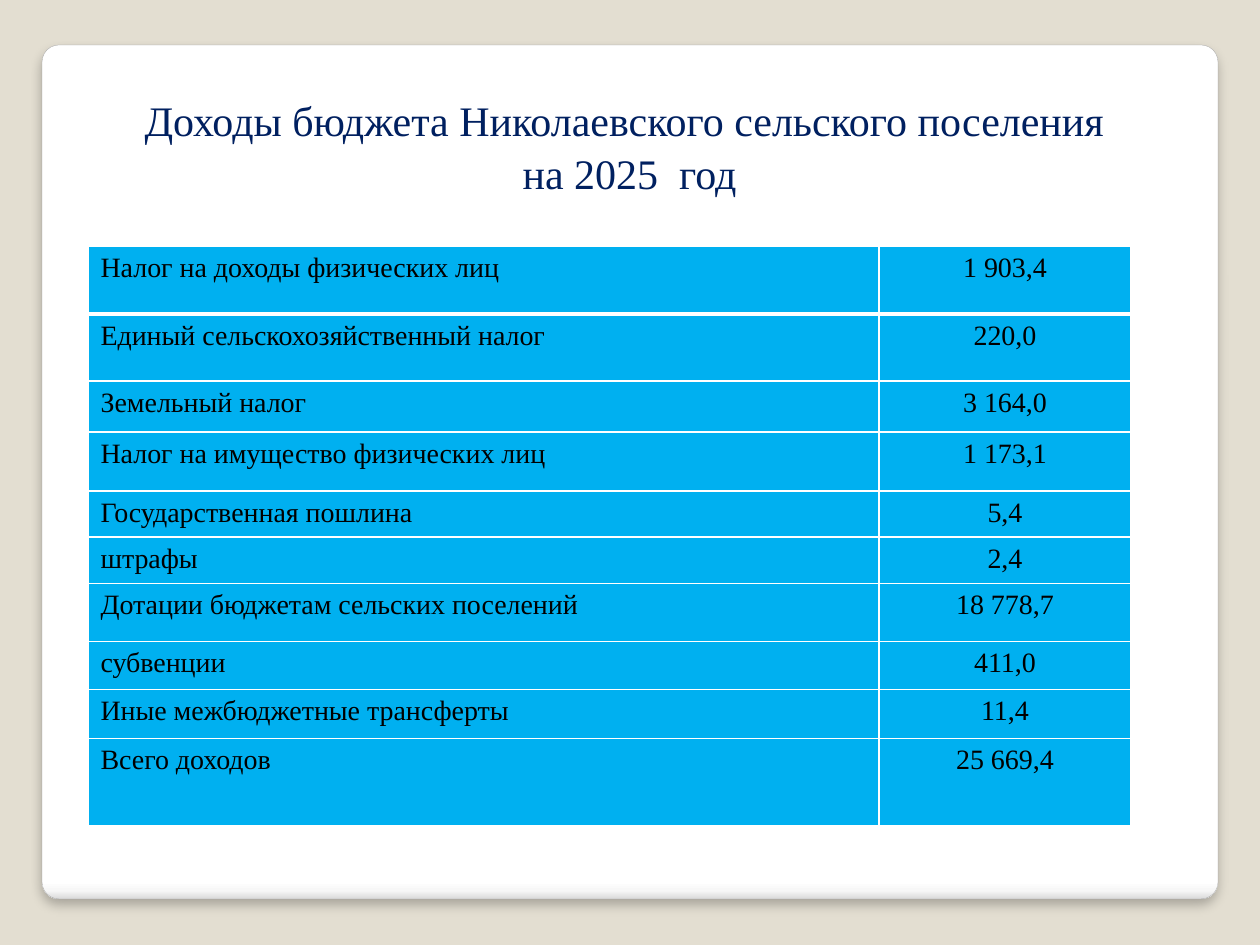
from typing import NamedTuple

from lxml import etree
from pptx import Presentation
from pptx.dml.color import RGBColor
from pptx.enum.shapes import MSO_SHAPE
from pptx.enum.text import PP_ALIGN
from pptx.oxml import parse_xml
from pptx.oxml.ns import nsdecls, qn
from pptx.util import Emu, Pt

ROUND = MSO_SHAPE.ROUNDED_RECTANGLE
LEFT, MID = PP_ALIGN.LEFT, PP_ALIGN.CENTER
SAND = RGBColor(0xE3, 0xDE, 0xD1)
WHITE = RGBColor(0xFF, 0xFF, 0xFF)
PALE = RGBColor(0xF7, 0xF7, 0xF7)
SILVER = RGBColor(0xDA, 0xDA, 0xDA)
GRAY = RGBColor(0xA4, 0xA4, 0xA4)
NAVY = RGBColor(0x00, 0x20, 0x60)
BLACK = RGBColor(0x00, 0x00, 0x00)
BLUE = RGBColor(0x00, 0xB0, 0xF0)
FONT = "Times New Roman"
SCALE = 914400 / 126


class Box(NamedTuple):
    left: int
    top: int
    width: int
    height: int


class Income(NamedTuple):
    label: str
    amount: str
    height: int


CARD = Box(42, 45, 1176, 854)
TITLE = Box(98, 88, 1063, 827)
GRID = Box(88, 246, 1043, 580)
COLS = (791, 252)
STOPS = ((0, WHITE), (98, WHITE), (99, PALE), (100, SILVER))
HEADING = (
    "Доходы бюджета Николаевского сельского поселения ",
    "на 2025  год",
)
ROWS = (
    Income("Налог на доходы физических лиц", "1 903,4", 68),
    Income("Единый сельскохозяйственный налог", "220,0", 67),
    Income("Земельный налог", "3 164,0", 51),
    Income("Налог на имущество физических лиц", "1 173,1", 59),
    Income("Государственная пошлина", "5,4", 46),
    Income("штрафы", "2,4", 46),
    Income("Дотации бюджетам сельских поселений", "18 778,7", 58),
    Income("субвенции", "411,0", 48),
    Income("Иные межбюджетные трансферты", "11,4", 49),
    Income("Всего доходов", "25 669,4", 88),
)


def px(value: int) -> Emu:
    return Emu(round(value * SCALE))


def place(box: Box) -> tuple:
    return tuple(px(side) for side in box)


def style(para, size: int, color: RGBColor, align) -> None:
    para.alignment = align
    for run in para.runs:
        run.font.name = FONT
        run.font.size = Pt(size)
        run.font.color.rgb = color


def draw_card(slide) -> None:
    card = slide.shapes.add_shape(ROUND, *place(CARD))
    card.adjustments[0] = 0.02
    card.line.color.rgb = GRAY
    card.line.width = Pt(0.16)
    card.fill.gradient()
    card.fill.gradient_angle = 270
    props = card._element.spPr
    stops = props.find(".//" + qn("a:gsLst"))
    for old in list(stops):
        stops.remove(old)
    for spot, color in STOPS:
        stop = etree.SubElement(stops, qn("a:gs"), pos=str(spot * 1000))
        etree.SubElement(stop, qn("a:srgbClr"), val=str(color))
    props.append(parse_xml(
        f'<a:effectLst {nsdecls("a")}>'
        f'<a:outerShdw blurRad="{Pt(6)}" dist="{Pt(4)}" dir="5400000" '
        'algn="t" rotWithShape="0">'
        f'<a:srgbClr val="{BLACK}"><a:alpha val="25000"/></a:srgbClr>'
        '</a:outerShdw></a:effectLst>'
    ))


def draw_title(slide) -> None:
    frame = slide.shapes.add_textbox(*place(TITLE)).text_frame
    frame.word_wrap = True
    frame.text = "\n".join(HEADING)
    for para in frame.paragraphs:
        para.space_before = Pt(1.5)
        style(para, 24, NAVY, MID)


def edge_cell(cell, top: int, bottom: int) -> None:
    props = cell._tc.get_or_add_tcPr()
    edges = (("L", 1), ("R", 1), ("T", top), ("B", bottom))
    for spot, (side, width) in enumerate(edges):
        props.insert(spot, parse_xml(
            f'<a:ln{side} {nsdecls("a")} w="{Pt(width)}"><a:solidFill>'
            f'<a:srgbClr val="{WHITE}"/></a:solidFill></a:ln{side}>'
        ))


def fill_cell(cell, text: str, align, row: int) -> None:
    cell.text_frame.text = text
    style(cell.text_frame.paragraphs[0], 16, BLACK, align)
    cell.fill.solid()
    cell.fill.fore_color.rgb = BLUE
    edge_cell(cell, 3 if row == 1 else 1, 3 if row == 0 else 1)


def draw_table(slide) -> None:
    frame = slide.shapes.add_table(len(ROWS), len(COLS), *place(GRID))
    table = frame.table
    table.first_row = False
    table.horz_banding = False
    for col, width in zip(table.columns, COLS):
        col.width = px(width)
    for row, item in enumerate(ROWS):
        table.rows[row].height = px(item.height)
        fill_cell(table.cell(row, 0), item.label, LEFT, row)
        fill_cell(table.cell(row, 1), item.amount, MID, row)


def main() -> None:
    deck = Presentation()
    deck.slide_width, deck.slide_height = px(1260), px(945)
    slide = deck.slides.add_slide(deck.slide_layouts[6])
    slide.background.fill.solid()
    slide.background.fill.fore_color.rgb = SAND
    draw_card(slide)
    draw_title(slide)
    draw_table(slide)
    deck.save("out.pptx")


if __name__ == "__main__":
    main()
